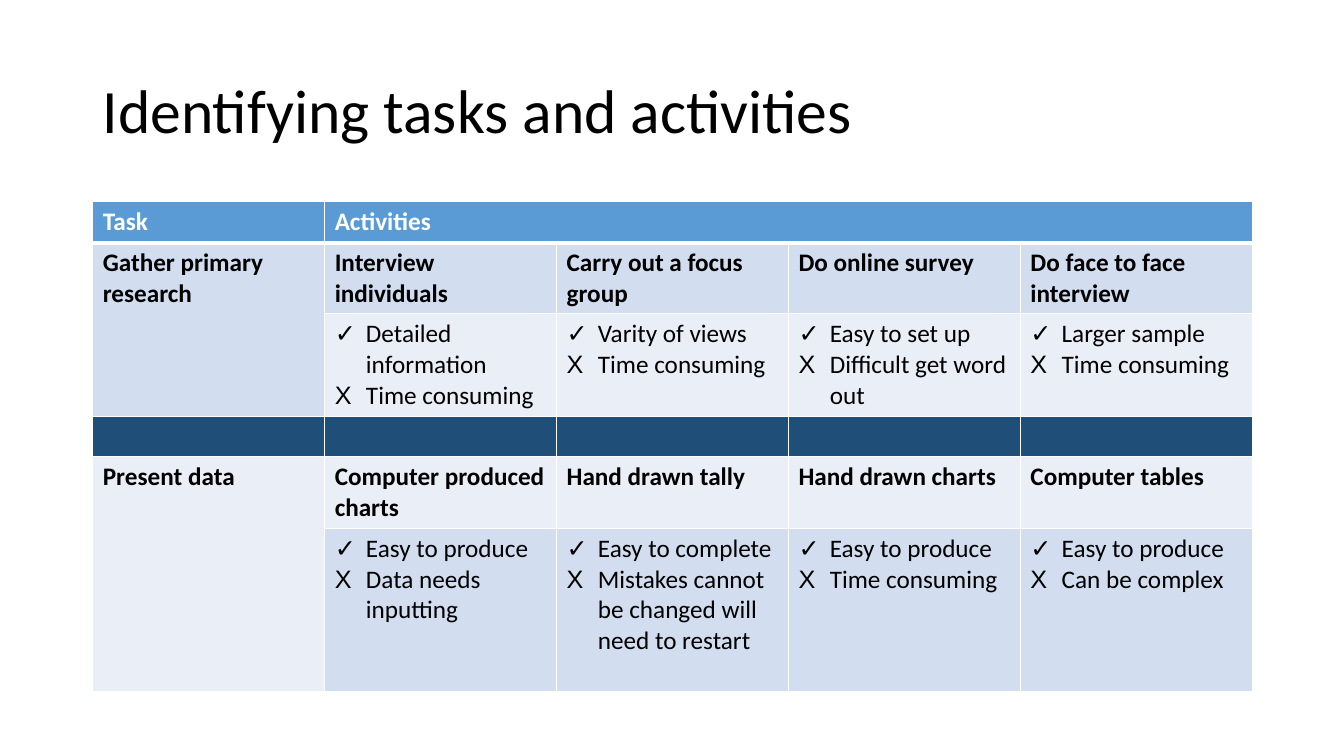
from lxml import etree
from pptx import Presentation
from pptx.dml.color import RGBColor
from pptx.enum.text import MSO_ANCHOR
from pptx.oxml.ns import qn
from pptx.util import Inches, Pt

FONT = "Calibri"
BLACK, WHITE = "000000", "FFFFFF"
HEADER, DIVIDER = "5B9BD5", "1F4E79"
BAND, LIGHT_BAND = "D2DEEF", "EAEFF7"
BULLETS = "✓X"

COLUMN_WIDTH = 2.3
ROW_HEIGHTS = [0.41, 0.7, 1.02, 0.4, 0.71, 1.62]
ROW_FILLS = [HEADER, BAND, LIGHT_BAND, DIVIDER, LIGHT_BAND, BAND]

# Each task: its first table row, its name, and (activity, advantage, drawback)
TASKS = [
    (1, "Gather primary research", [
        ("Interview individuals", "Detailed information", "Time consuming"),
        ("Carry out a focus group", "Varity of views", "Time consuming"),
        ("Do online survey", "Easy to set up", "Difficult get word out"),
        ("Do face to face interview", "Larger sample", "Time consuming"),
    ]),
    (4, "Present data", [
        ("Computer produced charts", "Easy to produce", "Data needs inputting"),
        ("Hand drawn tally", "Easy to complete",
         "Mistakes cannot be changed will need to restart"),
        ("Hand drawn charts", "Easy to produce", "Time consuming"),
        ("Computer tables", "Easy to produce", "Can be complex"),
    ]),
]


def rgb(value):
    return RGBColor.from_string(value)


def format_runs(p, size, color, bold=False):
    for r in p.runs:
        r.font.name = FONT
        r.font.size = Pt(size)
        r.font.bold = bold
        r.font.color.rgb = rgb(color)


def add_title(slide, text):
    s = slide.shapes.add_textbox(Inches(0.92), Inches(0.4), Inches(11.5), Inches(1.45))
    tf = s.text_frame
    tf.word_wrap = True
    tf.vertical_anchor = MSO_ANCHOR.MIDDLE
    tf.text = text
    p = tf.paragraphs[0]
    p.line_spacing = 0.9
    format_runs(p, 44, BLACK)


def set_borders(cell, top=1, bottom=1):
    """Draw white cell borders; top and bottom are widths in points."""
    tcPr = cell._tc.get_or_add_tcPr()
    for tag, width in (("lnL", 1), ("lnR", 1), ("lnT", top), ("lnB", bottom)):
        ln = etree.SubElement(tcPr, qn(f"a:{tag}"), w=str(Pt(width)))
        fill = etree.SubElement(ln, qn("a:solidFill"))
        etree.SubElement(fill, qn("a:srgbClr"), val=WHITE)


def set_bullet(p, char):
    pPr = p._p.get_or_add_pPr()
    pPr.set("marL", str(Inches(0.31)))
    pPr.set("indent", str(Inches(-0.31)))
    etree.SubElement(pPr, qn("a:buFont"), typeface="Arial")
    etree.SubElement(pPr, qn("a:buChar"), char=char)


def write_heading(cell, text, color=BLACK):
    cell.text = text
    format_runs(cell.text_frame.paragraphs[0], 18, color, bold=True)


def write_points(cell, points):
    cell.text = "\n".join(points)
    for p, char in zip(cell.text_frame.paragraphs, BULLETS):
        set_bullet(p, char)
        format_runs(p, 18, BLACK)


def add_grid(slide):
    """Add the table with its sizes, fills and borders, still without text."""
    rows, cols = len(ROW_HEIGHTS), 5
    frame = slide.shapes.add_table(rows, cols, Inches(0.92), Inches(2),
                                   Inches(COLUMN_WIDTH * cols), Inches(sum(ROW_HEIGHTS)))
    table = frame.table
    for column in table.columns:
        column.width = Inches(COLUMN_WIDTH)
    for i, (row, height) in enumerate(zip(table.rows, ROW_HEIGHTS)):
        row.height = Inches(height)
        for cell in row.cells:
            set_borders(cell, top=3 if i == 1 else 1, bottom=3 if i == 0 else 1)
            cell.fill.solid()
            cell.fill.fore_color.rgb = rgb(ROW_FILLS[i])
    return table


def fill_task(table, top, task, activities):
    table.cell(top, 0).merge(table.cell(top + 1, 0))
    write_heading(table.cell(top, 0), task)
    for col, (activity, *points) in enumerate(activities, start=1):
        write_heading(table.cell(top, col), activity)
        write_points(table.cell(top + 1, col), points)


def main():
    prs = Presentation()
    prs.slide_width, prs.slide_height = Inches(13.33), Inches(7.5)
    slide = prs.slides.add_slide(prs.slide_layouts[6])
    add_title(slide, "Identifying tasks and activities")
    table = add_grid(slide)
    table.cell(0, 1).merge(table.cell(0, 4))
    write_heading(table.cell(0, 0), "Task", WHITE)
    write_heading(table.cell(0, 1), "Activities", WHITE)
    for top, task, activities in TASKS:
        fill_task(table, top, task, activities)
    prs.save("out.pptx")


if __name__ == "__main__":
    main()
